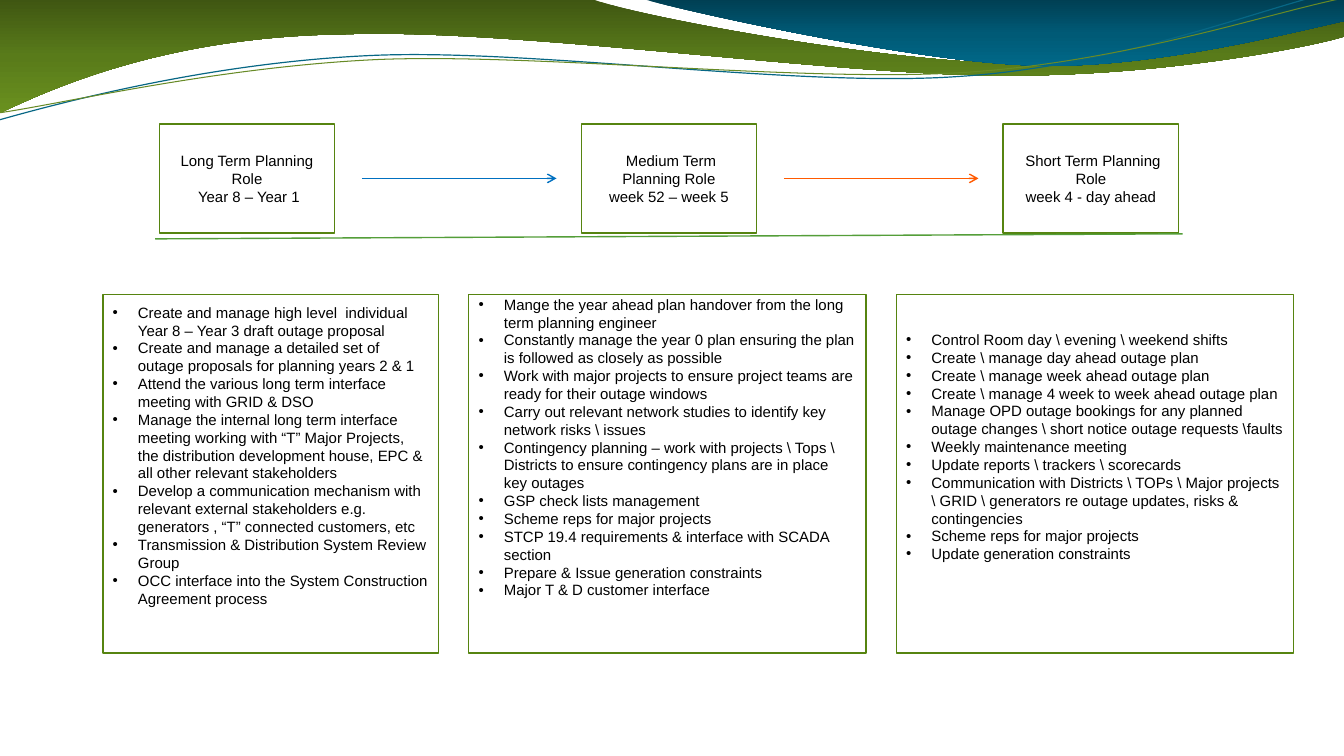
from copy import deepcopy

from pptx import Presentation
from pptx.dml.color import RGBColor
from pptx.enum.shapes import MSO_CONNECTOR, MSO_SHAPE
from pptx.enum.text import MSO_ANCHOR, PP_ALIGN
from pptx.oxml.ns import qn
from pptx.util import Inches, Pt

PROCESS = MSO_SHAPE.FLOWCHART_PROCESS
STRAIGHT = MSO_CONNECTOR.STRAIGHT
CENTER, LEFT = PP_ALIGN.CENTER, PP_ALIGN.LEFT
MIDDLE, TOP = MSO_ANCHOR.MIDDLE, MSO_ANCHOR.TOP
BLANK_LAYOUT = 6

# Wave outlines: a start point, then line (2 numbers) or curve (6 numbers) segments
GREEN_BAND = ((0, 0), [
    (5.87, -0.01),
    (6.34, 0.17, 8.84, 0.63, 10.11, 0.63),
    (11.37, 0.63, 12.77, 0.26, 13.33, 0.09),
    (13.34, 0.36),
    (13.11, 0.44, 11.59, 0.76, 9.94, 0.75),
    (8.29, 0.75, 5.09, 0.28, 3.43, 0.34),
    (1.72, 0.36, 0.61, 0.83, -0.02, 1.13),
    (0, 0)])
BLUE_BAND = ((6.38, -0.01), [
    (6.79, 0.11, 9.09, 0.62, 10.25, 0.65),
    (11.4, 0.69, 12.82, 0.32, 13.33, 0.21),
    (13.33, 0),
    (6.38, -0.01)])
BLUE_CURVE = ((-0.01, 1.19), [
    (0.63, 1.01, 2.1, 0.62, 3.69, 0.55),
    (5.27, 0.48, 7.89, 0.87, 9.49, 0.76),
    (11.1, 0.66, 12.51, 0.08, 13.3, -0.1)])
GREEN_CURVE = ((-0.01, 1.12), [
    (0.62, 1.03, 2.18, 0.66, 3.77, 0.59),
    (5.37, 0.53, 7.96, 0.82, 9.55, 0.72),
    (11.14, 0.62, 12.55, 0.14, 13.33, -0.02)])

STEPS = [
    ("Long Term Planning Role", " Year 8 – Year 1"),
    (" Medium Term Planning Role", "week 52 – week 5"),
    (" Short Term Planning Role", "week 4 - day ahead"),
]
ARROW_COLORS = ["0070C0", "FF5A00"]

# Each column: width, space above the first line, duties
COLUMNS = [
    (3.33, 0.09, [
        "Create and manage high level  individual  Year 8 – Year 3 draft outage proposal",
        "Create and manage a detailed set of outage proposals for planning years 2 & 1",
        "Attend the various long term interface meeting with GRID & DSO",
        "Manage the internal long term interface meeting working with “T” Major Projects, "
        "the distribution development house, EPC & all other relevant stakeholders",
        "Develop a communication mechanism with relevant external stakeholders e.g. "
        "generators , “T” connected customers, etc",
        "Transmission & Distribution System Review Group",
        "OCC interface into the System Construction Agreement process",
    ]),
    (3.94, 0.01, [
        "Mange the year ahead plan handover from the long term planning engineer",
        "Constantly manage the year 0 plan ensuring the plan is followed as closely as possible",
        "Work with major projects to ensure project teams are ready for their outage windows",
        "Carry out relevant network studies to identify key network risks \\ issues",
        "Contingency planning – work with projects \\ Tops \\ Districts to ensure "
        "contingency plans are in place key outages",
        "GSP check lists management",
        "Scheme reps for major projects",
        "STCP 19.4 requirements & interface with SCADA section",
        "Prepare & Issue generation constraints",
        "Major T & D customer interface",
    ]),
    (3.94, 0.36, [
        "Control Room day \\ evening \\ weekend shifts",
        "Create \\ manage day ahead outage plan",
        "Create \\ manage week ahead outage plan",
        "Create \\ manage 4 week to week ahead outage plan",
        "Manage OPD outage bookings for any planned outage changes \\ "
        "short notice outage requests \\faults",
        "Weekly maintenance meeting",
        "Update reports \\ trackers \\ scorecards",
        "Communication with Districts \\ TOPs \\ Major projects \\ GRID \\ "
        "generators re outage updates, risks & contingencies",
        "Scheme reps for major projects",
        "Update generation constraints",
    ]),
]


def color(hex_text):
    return RGBColor.from_string(hex_text)


def add_outline(page, outline, closed):
    """Build a freeform through all points, then join point triples into curves."""
    start, segments = outline
    points = [(Inches(x), Inches(y)) for segment in segments
              for x, y in zip(segment[::2], segment[1::2])]
    builder = page.shapes.build_freeform(Inches(start[0]), Inches(start[1]))
    builder.add_line_segments(points, close=closed)
    shape = builder.convert_to_shape()
    shape.shadow.inherit = False
    steps = iter(shape._element.findall(".//" + qn("a:lnTo")))
    for segment in segments:
        first = next(steps)
        if len(segment) == 6:
            curve = first.makeelement(qn("a:cubicBezTo"), {})
            first.addprevious(curve)
            for step in (first, next(steps), next(steps)):
                curve.append(step[0])
                step.getparent().remove(step)
    return shape


def add_band(page, outline, shades):
    band = add_outline(page, outline, True)
    band.line.fill.background()
    band.fill.gradient()
    band.fill.gradient_angle = 270
    stop_list = band._element.spPr.find(".//" + qn("a:gsLst"))
    stop_list.insert(1, deepcopy(stop_list[0]))
    for stop, position, shade in zip(band.fill.gradient_stops, (0, 0.5, 1), shades):
        stop.position = position
        stop.color.rgb = color(shade)


def add_wave_header(page):
    add_band(page, GREEN_BAND, ("3F5612", "597B1A", "6A911F"))
    add_band(page, BLUE_BAND, ("003F53", "005A76", "006A8B"))
    for outline, shade, width in ((BLUE_CURVE, "076785", 0.85),
                                  (GREEN_CURVE, "678A26", 0.75)):
        curve = add_outline(page, outline, False)
        curve.fill.background()
        curve.line.color.rgb = color(shade)
        curve.line.width = Pt(width)


def add_line(page, x1, y1, x2, y2, shade, arrow=False):
    line = page.shapes.add_connector(STRAIGHT, Inches(x1), Inches(y1), Inches(x2), Inches(y2))
    line.line.color.rgb = color(shade)
    line.line.width = Pt(1)
    properties = line._element.spPr
    if arrow:
        stroke = properties.find(qn("a:ln"))
        stroke.append(stroke.makeelement(qn("a:tailEnd"), {"type": "arrow"}))
    properties.append(properties.makeelement(qn("a:effectLst"), {}))


def add_process_box(page, left, top, width, height, lines, above=None):
    """A box of centred lines, or of bullets when the space above them is given."""
    bulleted = above is not None
    box = page.shapes.add_shape(PROCESS, Inches(left), Inches(top), Inches(width), Inches(height))
    box.shadow.inherit = False
    box.fill.solid()
    box.fill.fore_color.rgb = color("FFFFFF")
    box.line.color.rgb = color("568410")
    box.line.width = Pt(1)
    frame = box.text_frame
    frame.word_wrap = True
    frame.vertical_anchor = TOP if bulleted else MIDDLE
    frame.margin_left = frame.margin_right = Inches(0.1)
    frame.margin_top = Inches(above if bulleted else 0.05)
    frame.margin_bottom = Inches(0.05)
    for number, text in enumerate(lines):
        para = frame.add_paragraph() if number else frame.paragraphs[0]
        para.alignment = LEFT if bulleted else CENTER
        para.line_spacing = Pt(12.77)
        if bulleted:
            settings = para._p.get_or_add_pPr()
            settings.set("marL", str(Inches(0.25)))
            settings.set("indent", str(-Inches(0.25)))
            settings.append(settings.makeelement(qn("a:buFont"), {"typeface": "Arial"}))
            settings.append(settings.makeelement(qn("a:buChar"), {"char": "•"}))
        span = para.add_run()
        span.text = text
        span.font.name = "Arial"
        span.font.size = Pt(10.7)
        span.font.color.rgb = color("000000")


def add_timeline(page, left, top, total_width):
    width, height, gap = 1.74, 1.08, 0.27
    pitch = (total_width - width) / (len(STEPS) - 1)
    for number, lines in enumerate(STEPS):
        add_process_box(page, left + number * pitch, top, width, height, lines)
    for number, shade in enumerate(ARROW_COLORS):
        start = left + number * pitch + width + gap
        middle = top + height / 2
        add_line(page, start, middle, start + 1.93, middle, shade, arrow=True)
    # Rule under the steps
    add_line(page, left - 0.04, top + 1.14, left + total_width + 0.04, top + 1.09, "549E39")


def add_duty_columns(page, left, top):
    for width, above, duties in COLUMNS:
        add_process_box(page, left, top, width, 3.56, duties, above)
        left += width + 0.3


def main():
    deck = Presentation()
    deck.slide_width, deck.slide_height = Inches(13.33), Inches(7.5)
    page = deck.slides.add_slide(deck.slide_layouts[BLANK_LAYOUT])
    add_wave_header(page)
    add_timeline(page, 1.58, 1.23, 10.11)
    add_duty_columns(page, 1.02, 2.92)
    deck.save("out.pptx")


if __name__ == "__main__":
    main()
